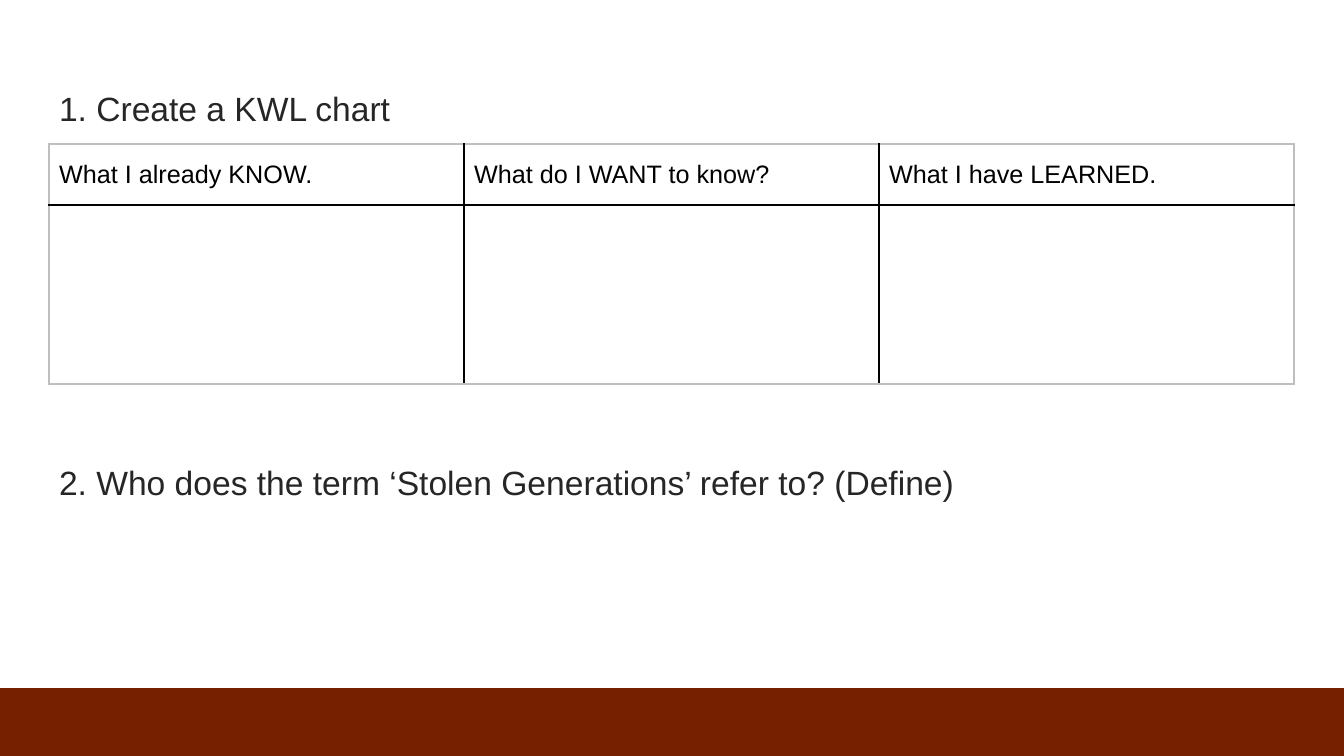
from pptx import Presentation
from pptx import util as u
from pptx.dml.color import RGBColor
from pptx.enum import shapes, text
from pptx.oxml import parse_xml
from pptx.oxml.ns import nsdecls

TASKS = ["1. Create a KWL chart",
         "2. Who does the term ‘Stolen Generations’ refer to? (Define)"]
HEADS = ["What I already KNOW.", "What do I WANT to know?", "What I have LEARNED."]
ROWS = [61, 179]
COL = 415
LEFT, TOP = 49, 144
WIDE, HIGH = 1344, 756
BAND = 688
GAP = 334
THEME = {"font": "Arial", "task": 24, "cell": 18, "ink": "262626",
         "black": "000000", "edge": "BFBFBF", "band": "762000"}


def px(n):
    return u.Emu(round(n * 914400 / 100.8))


def style(par, size, color):
    for run in par.runs:
        run.font.name = THEME["font"]
        run.font.size = u.Pt(size)
        run.font.color.rgb = RGBColor.from_string(THEME[color])


def border(cell, side, color):
    line = parse_xml(
        f'<a:{side} {nsdecls("a")} w="12700"><a:solidFill>'
        f'<a:srgbClr val="{THEME[color]}"/></a:solidFill></a:{side}>')
    cell._tc.get_or_add_tcPr().append(line)


def add_band(slide):
    band = slide.shapes.add_shape(shapes.MSO_SHAPE.RECTANGLE, 0, px(BAND),
                                  px(WIDE), px(HIGH - BAND))
    band.shadow.inherit = False
    band.fill.solid()
    band.fill.fore_color.rgb = RGBColor.from_string(THEME["band"])
    band.line.fill.background()


def add_tasks(slide):
    frame = slide.shapes.add_textbox(px(LEFT), px(80), px(924), px(422)).text_frame
    frame.word_wrap = True
    frame.margin_left = frame.margin_right = px(10)
    frame.margin_top = px(8)
    frame.text = "\n".join(TASKS)
    for par in frame.paragraphs:
        style(par, THEME["task"], "ink")
    frame.paragraphs[1].space_before = px(GAP)


def add_grid(slide):
    grid = slide.shapes.add_table(len(ROWS), len(HEADS), px(LEFT), px(TOP),
                                  px(COL * len(HEADS)), px(sum(ROWS))).table
    grid.first_row = grid.horz_banding = False
    for col in grid.columns:
        col.width = px(COL)
    for r, high in enumerate(ROWS):
        grid.rows[r].height = px(high)
        for c, head in enumerate(HEADS):
            cell = grid.cell(r, c)
            outer = {"lnL": c == 0, "lnR": c == len(HEADS) - 1,
                     "lnT": r == 0, "lnB": r == len(ROWS) - 1}
            for side, edge in outer.items():
                border(cell, side, "edge" if edge else "black")
            cell.fill.background()
            if r == 0:
                cell.text_frame.text = head
                cell.vertical_anchor = text.MSO_ANCHOR.MIDDLE
                style(cell.text_frame.paragraphs[0], THEME["cell"], "black")


def main():
    deck = Presentation()
    deck.slide_width, deck.slide_height = px(WIDE), px(HIGH)
    slide = deck.slides.add_slide(deck.slide_layouts[6])
    add_band(slide)
    add_tasks(slide)
    add_grid(slide)
    deck.save("out.pptx")


if __name__ == "__main__":
    main()
